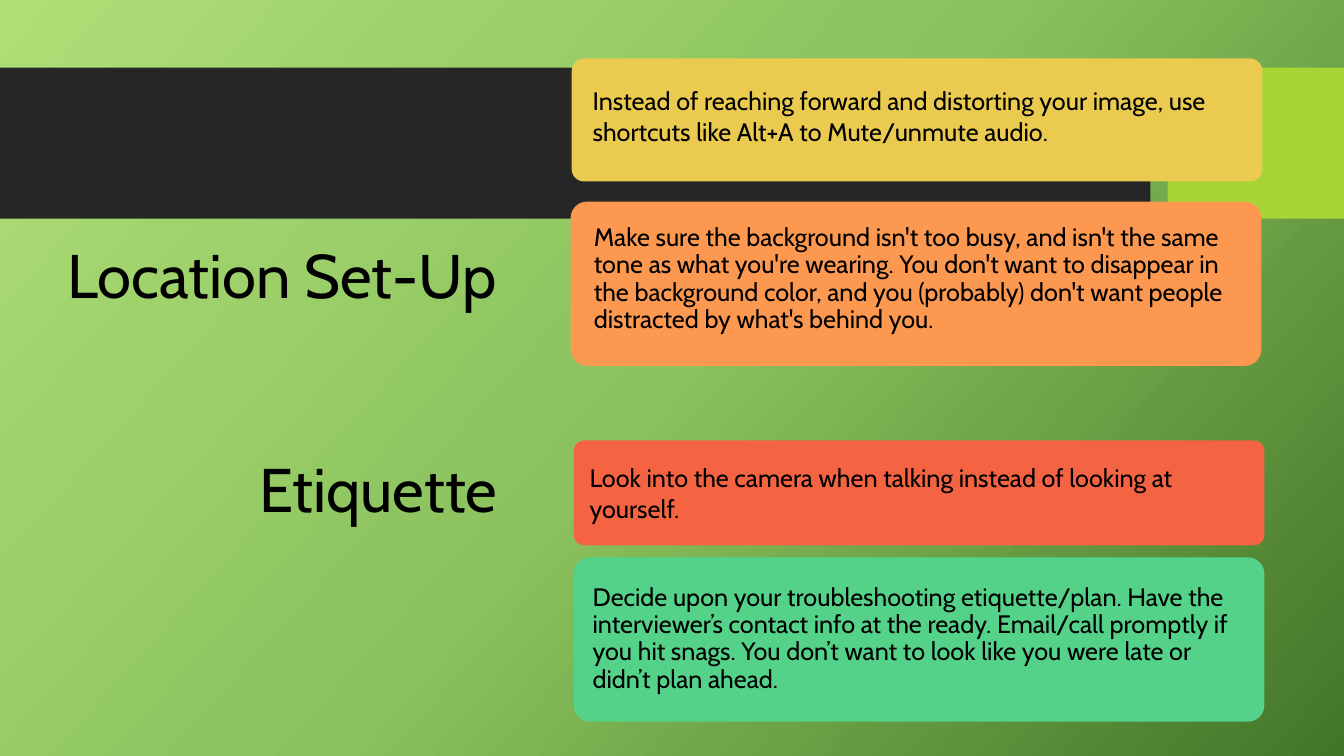
from copy import deepcopy
from dataclasses import dataclass

from pptx import Presentation
from pptx.dml.color import RGBColor
from pptx.enum.shapes import MSO_SHAPE
from pptx.enum.text import MSO_ANCHOR, PP_ALIGN
from pptx.oxml.ns import qn
from pptx.slide import Slide
from pptx.util import Inches, Pt

BLACK = RGBColor(0x00, 0x00, 0x00)
CHARCOAL = RGBColor(0x26, 0x26, 0x26)
LIME = RGBColor(0xA7, 0xD5, 0x35)
YELLOW = RGBColor(0xEA, 0xCA, 0x4F)
ORANGE = RGBColor(0xFD, 0x98, 0x50)
RED = RGBColor(0xF4, 0x64, 0x42)
GREEN = RGBColor(0x54, 0xD2, 0x89)
BACKDROP = [
    (0.0, RGBColor(0xAF, 0xDE, 0x77)),
    (0.5, RGBColor(0x8B, 0xC2, 0x5D)),
    (1.0, RGBColor(0x43, 0x75, 0x28)),
]
CARD_WIDTH = 6.85


@dataclass
class Box:
    left: float
    top: float
    width: float
    height: float


@dataclass
class Label:
    text: str
    box: Box
    size: int = 18
    align: PP_ALIGN = PP_ALIGN.LEFT
    anchor: MSO_ANCHOR = MSO_ANCHOR.TOP
    spacing: float = 1.0
    inset: float = 0.1


@dataclass
class Card:
    left: float
    top: float
    height: float
    color: RGBColor
    label: Label


BANDS = [
    (Box(0, 0.67, 11.41, 1.5), CHARCOAL),
    (Box(11.58, 0.67, 1.75, 1.5), LIME),
]

HEADINGS = [
    Label("Location Set-Up", Box(0.43, 2.3, 4.6, 0.84), 44, PP_ALIGN.RIGHT),
    Label("Etiquette", Box(0.94, 3.91, 4.09, 1.96), 44, PP_ALIGN.RIGHT,
          MSO_ANCHOR.MIDDLE, 0.9),
]

CARDS = [
    Card(5.67, 0.58, 1.22, YELLOW, Label(
        "Instead of reaching forward and distorting your image, use "
        "shortcuts like Alt+A to Mute/unmute audio.",
        Box(5.78, 0.8, 6.34, 0.71))),
    Card(5.66, 2, 1.63, ORANGE, Label(
        "Make sure the background isn't too busy, and isn't the same tone as "
        "what you're wearing. You don't want to disappear in the background "
        "color, and you (probably) don't want people distracted by what's "
        "behind you.",
        Box(5.75, 2.13, 6.65, 1.28), anchor=MSO_ANCHOR.MIDDLE,
        spacing=0.9, inset=0.14)),
    Card(5.69, 4.37, 1.04, RED, Label(
        "Look into the camera when talking instead of looking at yourself.",
        Box(5.75, 4.54, 6.5, 0.71))),
    Card(5.69, 5.53, 1.63, GREEN, Label(
        "Decide upon your troubleshooting etiquette/plan. Have the "
        "interviewer’s contact info at the ready. Email/call promptly if you "
        "hit snags. You don’t want to look like you were late or didn’t plan "
        "ahead.",
        Box(5.78, 5.75, 6.67, 1.19), spacing=0.9)),
]


def inches(box: Box) -> list[Inches]:
    return [Inches(v) for v in (box.left, box.top, box.width, box.height)]


def paint_background(s: Slide) -> None:
    fill = s.background.fill
    fill.gradient()
    fill.gradient_angle = 360 - 42
    # A new gradient has two stops; add the third
    stop_list = next(s.background._cSld.iter(qn("a:gsLst")))
    stop_list.append(deepcopy(stop_list[-1]))
    for stop, (position, color) in zip(fill.gradient_stops, BACKDROP):
        stop.position = position
        stop.color.rgb = color


def add_block(s: Slide, box: Box, color: RGBColor, rounded: bool = False) -> None:
    kind = MSO_SHAPE.ROUNDED_RECTANGLE if rounded else MSO_SHAPE.RECTANGLE
    sp = s.shapes.add_shape(kind, *inches(box))
    if rounded:
        sp.adjustments[0] = 0.1
    sp.shadow.inherit = False
    sp.fill.solid()
    sp.fill.fore_color.rgb = color
    sp.line.fill.background()


def add_label(s: Slide, label: Label) -> None:
    tf = s.shapes.add_textbox(*inches(label.box)).text_frame
    frame_format = {"word_wrap": True, "vertical_anchor": label.anchor}
    if label.inset != 0.1:
        for side in ("left", "top", "right", "bottom"):
            frame_format[f"margin_{side}"] = Inches(label.inset)
    for name, value in frame_format.items():
        setattr(tf, name, value)
    p = tf.paragraphs[0]
    p.alignment = label.align
    p.line_spacing = label.spacing
    r = p.add_run()
    r.text = label.text
    for name, value in {"name": "Cabin", "size": Pt(label.size)}.items():
        setattr(r.font, name, value)
    r.font.color.rgb = BLACK


def main() -> None:
    prs = Presentation()
    prs.slide_width, prs.slide_height = Inches(13.33), Inches(7.5)
    s = prs.slides.add_slide(prs.slide_layouts[6])
    paint_background(s)

    # Bands across the top
    for box, color in BANDS:
        add_block(s, box, color)

    # Section headings
    for heading in HEADINGS:
        add_label(s, heading)

    # Advice cards
    for card in CARDS:
        box = Box(card.left, card.top, CARD_WIDTH, card.height)
        add_block(s, box, card.color, rounded=True)
        add_label(s, card.label)

    prs.save("out.pptx")


if __name__ == "__main__":
    main()
